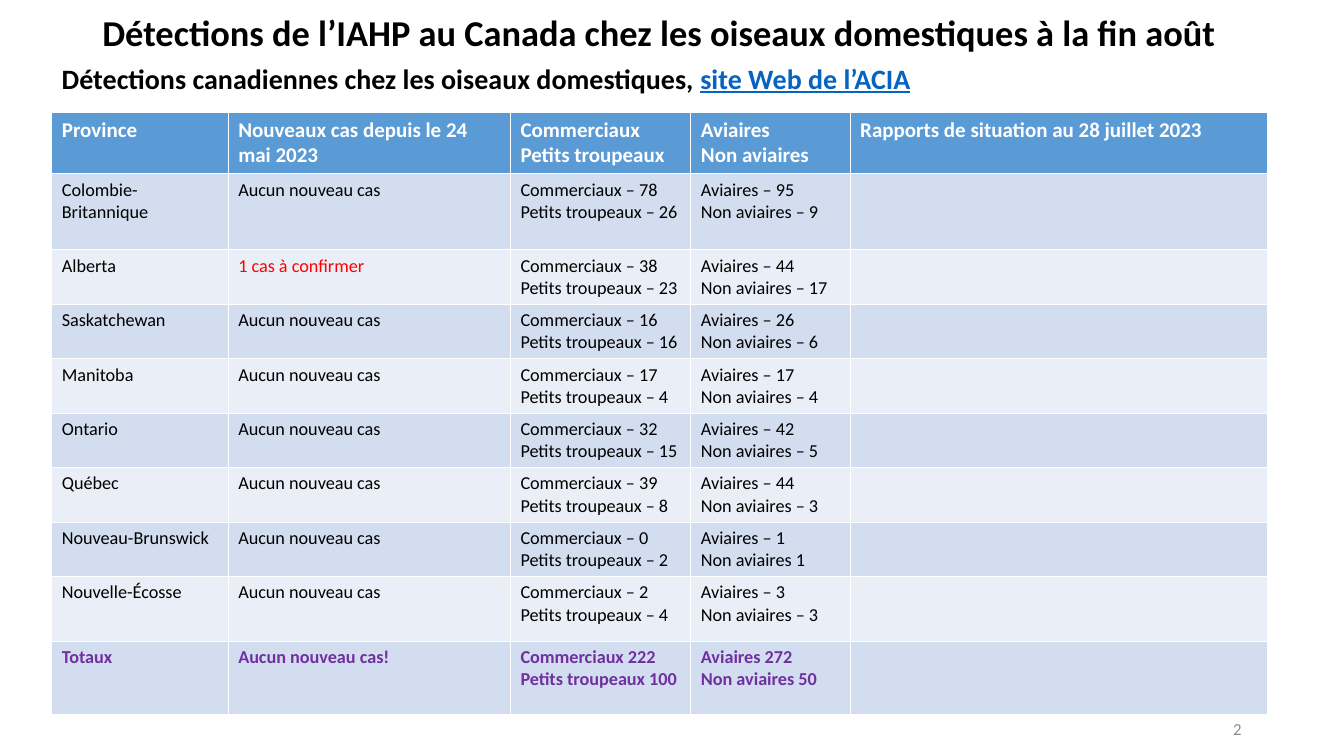
from pptx import Presentation
from pptx.dml.color import RGBColor
from pptx.enum.text import MSO_ANCHOR, PP_ALIGN
from pptx.util import Pt

MIDDLE, BOTTOM = MSO_ANCHOR.MIDDLE, MSO_ANCHOR.BOTTOM
LEFT, RIGHT = PP_ALIGN.LEFT, PP_ALIGN.RIGHT
FONT = "Calibri"
BLACK, WHITE, RED, PURPLE = "000000", "FFFFFF", "FF0000", "7030A0"
LINK_BLUE, GREY = "0563C1", "8C8C8C"
HEADER_FILL, BAND_FILLS = "5B9BD5", ("D2DEEF", "EAEFF7")

COLUMN_WIDTHS = (126, 201.6, 128.9, 113.8, 298.1)
ROW_HEIGHTS = (44.2, 54.3, *[38.9] * 6, 46.4, 52.1)
NO_CASE = "Aucun nouveau cas"
ROWS = (
    ("Province", "Nouveaux cas depuis le 24 mai 2023", "Commerciaux\nPetits troupeaux",
     "Aviaires\nNon aviaires", "Rapports de situation au 28 juillet 2023"),
    ("Colombie-Britannique", NO_CASE, "Commerciaux – 78\nPetits troupeaux – 26",
     "Aviaires – 95\nNon aviaires – 9", ""),
    ("Alberta", "1 cas à confirmer", "Commerciaux – 38\nPetits troupeaux – 23",
     "Aviaires – 44\nNon aviaires – 17", ""),
    ("Saskatchewan", NO_CASE, "Commerciaux – 16\nPetits troupeaux – 16",
     "Aviaires – 26\nNon aviaires – 6", ""),
    ("Manitoba", NO_CASE, "Commerciaux – 17\nPetits troupeaux – 4",
     "Aviaires – 17\nNon aviaires – 4", ""),
    ("Ontario", NO_CASE, "Commerciaux – 32\nPetits troupeaux – 15",
     "Aviaires – 42\nNon aviaires – 5", ""),
    ("Québec", NO_CASE, "Commerciaux – 39\nPetits troupeaux – 8",
     "Aviaires – 44\nNon aviaires – 3", ""),
    ("Nouveau-Brunswick", NO_CASE, "Commerciaux – 0\nPetits troupeaux – 2",
     "Aviaires – 1\nNon aviaires 1", ""),
    ("Nouvelle-Écosse", NO_CASE, "Commerciaux – 2\nPetits troupeaux – 4",
     "Aviaires – 3\nNon aviaires – 3", ""),
    ("Totaux", "Aucun nouveau cas!", "Commerciaux 222\nPetits troupeaux 100",
     "Aviaires 272\nNon aviaires 50", ""),
)


def rgb(value):
    return RGBColor.from_string(value)


def style_font(font, size, color, bold=False):
    font.name = FONT
    font.size = Pt(size)
    font.bold = bold
    font.color.rgb = rgb(color)


def add_text(s, box, text, size, color=BLACK, bold=False, anchor=MIDDLE, align=LEFT):
    """Add a one-paragraph text box and return its paragraph."""
    tf = s.shapes.add_textbox(*map(Pt, box)).text_frame
    tf.word_wrap = True
    tf.vertical_anchor = anchor
    tf.text = text
    p = tf.paragraphs[0]
    p.alignment = align
    p.line_spacing = 0.9
    style_font(p.runs[0].font, size, color, bold)
    return p


def add_link_text(p, text, size):
    """Append a run that looks like a link."""
    r = p.add_run()
    r.text = text
    style_font(r.font, size, LINK_BLUE, bold=True)
    r.font.underline = True


def fill_cell(cell, text, fill, size, color, bold):
    cell.fill.solid()
    cell.fill.fore_color.rgb = rgb(fill)
    cell.text_frame.text = text
    for p in cell.text_frame.paragraphs:
        for r in p.runs:
            style_font(r.font, size, color, bold)


def row_style(row):
    """Return the fill, text size, colour and weight of a table row."""
    if row == 0:
        return HEADER_FILL, 15, WHITE, True
    is_total = row == len(ROWS) - 1
    return BAND_FILLS[(row - 1) % 2], 13, PURPLE if is_total else BLACK, is_total


def add_detections_table(s, left, top):
    table = s.shapes.add_table(
        len(ROWS), len(COLUMN_WIDTHS), Pt(left), Pt(top),
        Pt(sum(COLUMN_WIDTHS)), Pt(sum(ROW_HEIGHTS))).table
    for column, width in zip(table.columns, COLUMN_WIDTHS):
        column.width = Pt(width)
    for i, (texts, height) in enumerate(zip(ROWS, ROW_HEIGHTS)):
        table.rows[i].height = Pt(height)
        fill, size, color, bold = row_style(i)
        for j, text in enumerate(texts):
            text_color = RED if text == "1 cas à confirmer" else color
            fill_cell(table.cell(i, j), text, fill, size, text_color, bold)


def main():
    prs = Presentation()
    prs.slide_width, prs.slide_height = Pt(960), Pt(540)
    s = prs.slides.add_slide(prs.slide_layouts[6])
    add_text(s, (66, -3, 828, 55),
             "Détections de l’IAHP au Canada chez les oiseaux domestiques à la fin août",
             26, bold=True)
    p = add_text(s, (37, 32.5, 900, 39),
                 "Détections canadiennes chez les oiseaux domestiques, ",
                 20, bold=True, anchor=BOTTOM)
    add_link_text(p, "site Web de l’ACIA", 20)
    add_text(s, (678, 507, 216, 29), "2", 12, GREY, align=RIGHT)
    add_detections_table(s, 37, 80)
    prs.save("out.pptx")


if __name__ == "__main__":
    main()
